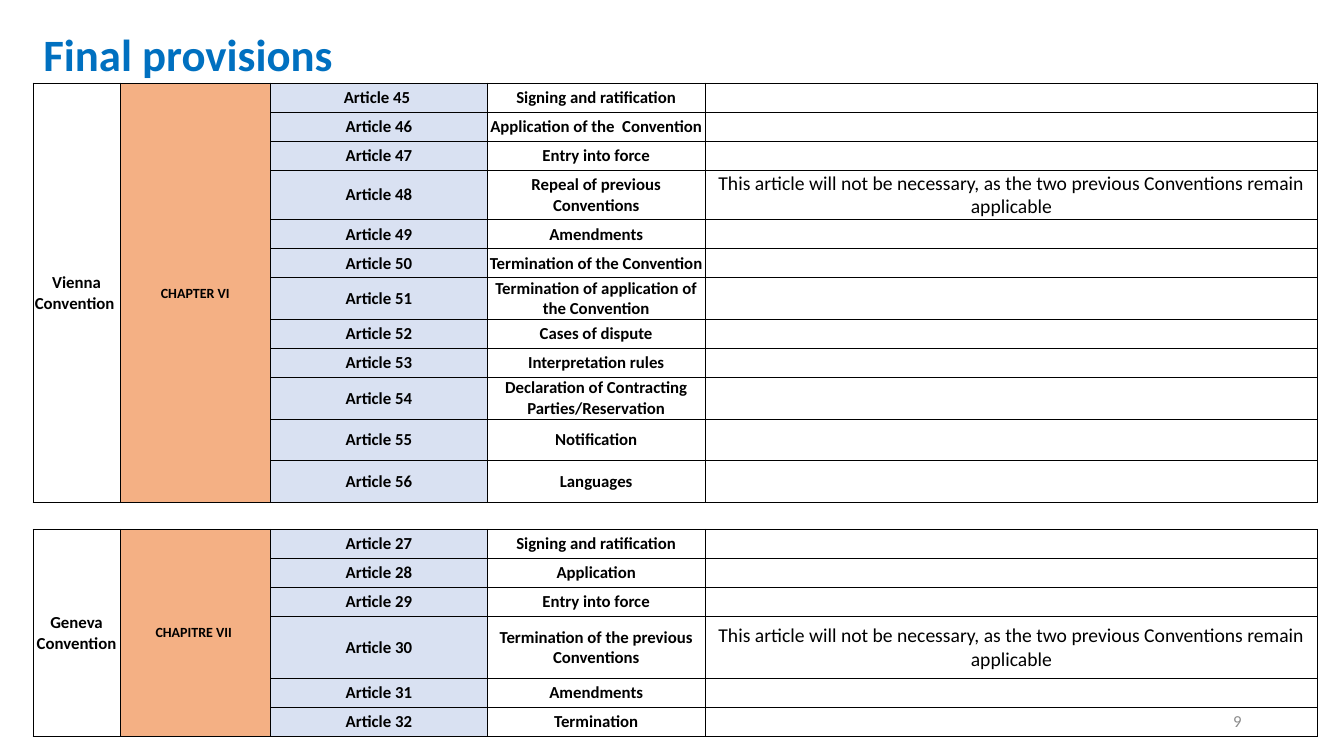
from lxml.etree import SubElement
from pptx import Presentation
from pptx.dml.color import RGBColor
from pptx.enum.text import MSO_ANCHOR, PP_ALIGN
from pptx.oxml import parse_xml
from pptx.oxml.ns import nsdecls, qn
from pptx.util import Cm, Pt

COLOURS = {"title": "0070C0", "text": "000000", "number": "8C8C8C",
           "chapter": "F4B084", "article": "D9E1F2", "border": "000000"}
NOTE = ("This article will not be necessary, as the two previous "
        "Conventions remain applicable")
COLUMN_WIDTHS = [2.18, 3.8, 5.46, 5.49, 15.44]
LOW, TALL, GAP = 0.73, 1.05, 0.68

# Each convention: name, chapter, article labels, then (subject, row height, note)
CONVENTIONS = [
    ("Vienna Convention ", "CHAPTER VI",
     ["Article 45 "] + [f"Article {number}" for number in range(46, 57)], [
         ("Signing and ratification", LOW, ""),
         ("Application of the  Convention", LOW, ""),
         ("Entry into force", LOW, ""),
         ("Repeal of previous Conventions", 1.24, NOTE),
         ("Amendments", LOW, ""),
         ("Termination of the Convention", LOW, ""),
         ("Termination of application of the Convention", TALL, ""),
         ("Cases of dispute", LOW, ""),
         ("Interpretation rules", LOW, ""),
         ("Declaration of Contracting Parties/Reservation", TALL, ""),
         ("Notification", TALL, ""),
         ("Languages", TALL, "")]),
    ("Geneva Convention", "CHAPITRE VII ",
     [f"Article {number}" for number in range(27, 33)], [
         ("Signing and ratification", LOW, ""),
         ("Application", LOW, ""),
         ("Entry into force", LOW, ""),
         ("Termination of the previous Conventions", 1.56, NOTE),
         ("Amendments", LOW, ""),
         ("Termination", LOW, "")]),
]


def write(frame, text, size=12, bold=True, colour="text", align=PP_ALIGN.CENTER):
    para = frame.paragraphs[0]
    para.alignment = align
    if not text:
        SubElement(para._p, qn("a:endParaRPr"), sz=str(size * 100))
        return para
    span = para.add_run()
    span.text = text
    span.font.name = "Calibri"
    span.font.size = Pt(size)
    span.font.bold = bold
    span.font.color.rgb = RGBColor.from_string(COLOURS[colour])
    return para


def set_borders(cell, **widths):
    """Border widths in points by side; 0 leaves the side without a line."""
    properties = cell._tc.get_or_add_tcPr()
    for position, side in enumerate("LRTB"):
        width = widths[side]
        paint = (f'<a:solidFill><a:srgbClr val="{COLOURS["border"]}"/></a:solidFill>'
                 if width else "<a:noFill/>")
        properties.insert(position, parse_xml(
            f'<a:ln{side} {nsdecls("a")} w="{Pt(width)}">{paint}</a:ln{side}>'))


deck = Presentation()
deck.slide_width, deck.slide_height = Cm(33.87), Cm(19.05)
page = deck.slides.add_slide(deck.slide_layouts[5])

# Title
title = page.shapes.title
title.left, title.top, title.width, title.height = Cm(0.84), Cm(0.2), Cm(30.05), Cm(2.46)
title.text_frame.vertical_anchor = MSO_ANCHOR.MIDDLE
heading = write(title.text_frame, "Final provisions", size=32, colour="title",
                align=PP_ALIGN.LEFT)
heading.line_spacing = 0.9

# Table with a gap row between the conventions
heights = []
for name, chapter, articles, subjects in CONVENTIONS:
    heights += [height for subject, height, note in subjects] + [GAP]
heights.pop()
table = page.shapes.add_table(
    len(heights), len(COLUMN_WIDTHS), Cm(0.84), Cm(2.1),
    Cm(sum(COLUMN_WIDTHS)), Cm(sum(heights))).table
table.first_row = table.horz_banding = False
for column, width in zip(table.columns, COLUMN_WIDTHS):
    column.width = Cm(width)
for row, height in zip(table.rows, heights):
    row.height = Cm(height)
for cell in table.iter_cells():
    cell.margin_left = cell.margin_right = cell.margin_top = Cm(0.02)
    cell.margin_bottom = Cm(0)
    cell.vertical_anchor = MSO_ANCHOR.MIDDLE
    cell.fill.background()

# Convention blocks
first = 0
for name, chapter, articles, subjects in CONVENTIONS:
    last = first + len(subjects) - 1
    for offset, (subject, height, note) in enumerate(subjects):
        index = first + offset
        labels = [name if offset == 0 else "", chapter if offset == 0 else "",
                  articles[offset], subject, note]
        for position, label in enumerate(labels):
            cell = table.cell(index, position)
            write(cell.text_frame, label, size={1: 10, 4: 14 if note else 12}.get(position, 12),
                  bold=position < 4)
            if position in (1, 2):
                cell.fill.solid()
                cell.fill.fore_color.rgb = RGBColor.from_string(
                    COLOURS["chapter" if position == 1 else "article"])
            merged = position < 2
            set_borders(cell, L=1 if position == 0 else 0.5,
                        R=1 if position == 4 else 0.5,
                        T=1 if merged or index == first else 0.5,
                        B=1 if merged or index == last else 0.5)
    for position in (0, 1):
        table.cell(first, position).merge(table.cell(last, position))
    first = last + 2

# Gap row
for cell in table.rows[len(CONVENTIONS[0][3])].cells:
    write(cell.text_frame, "")
    set_borders(cell, L=0, R=0, T=1, B=1)

# Slide number
box = page.shapes.add_textbox(Cm(23.92), Cm(17.66), Cm(7.62), Cm(1.01))
box.text_frame.word_wrap = True
box.text_frame.vertical_anchor = MSO_ANCHOR.MIDDLE
write(box.text_frame, "9", bold=False, colour="number", align=PP_ALIGN.RIGHT)

deck.save("out.pptx")
